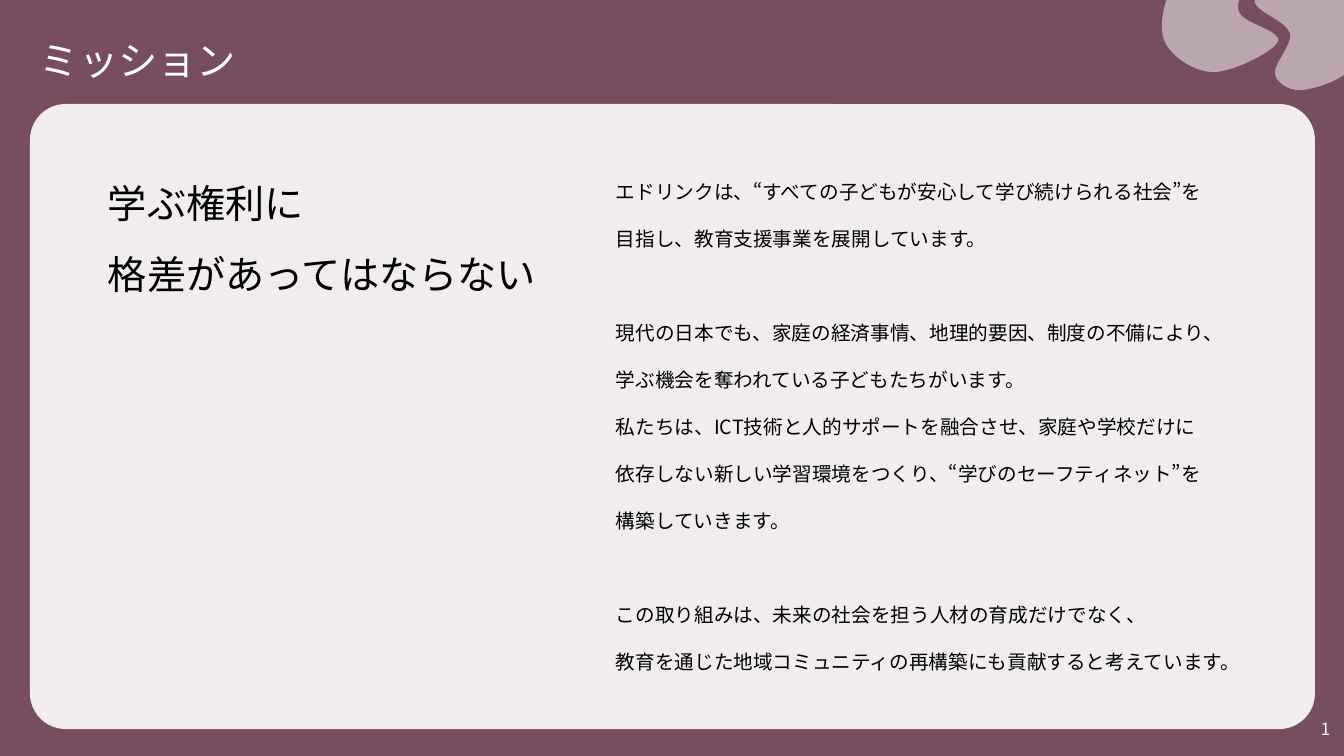
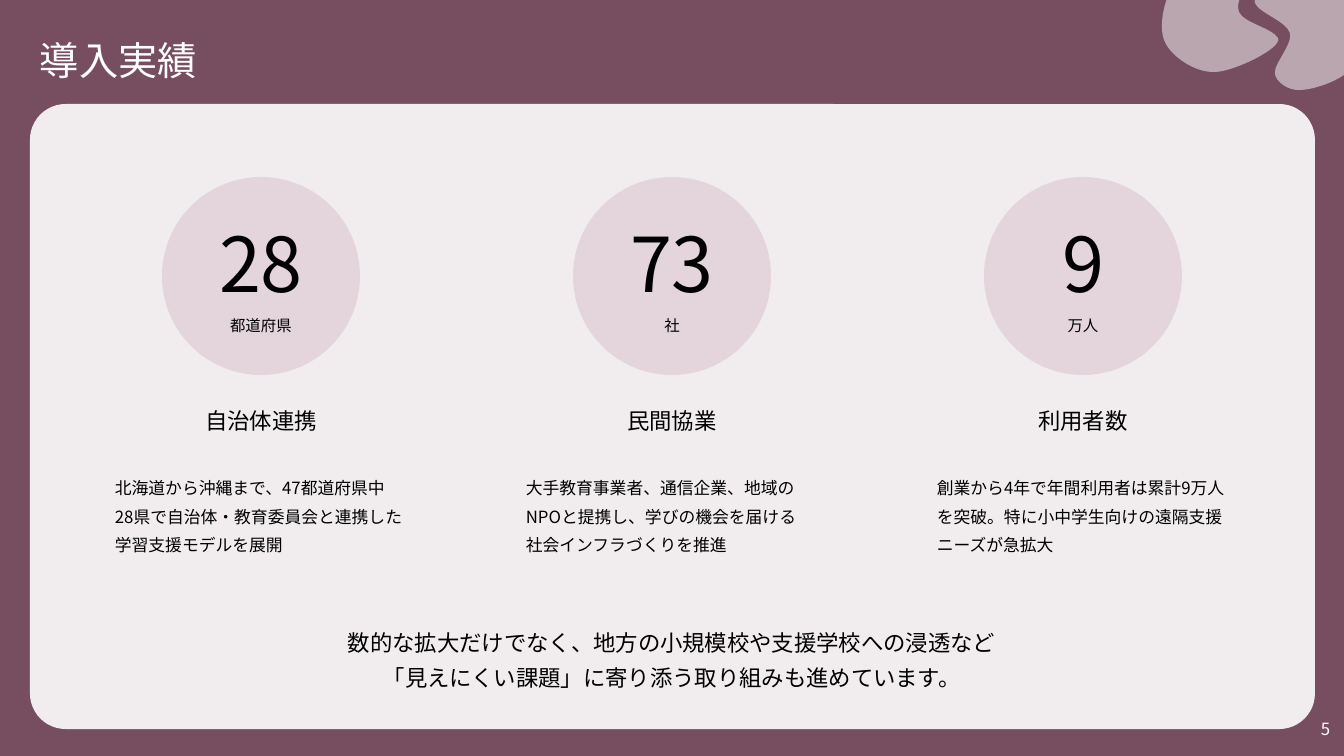
"""Build the mission and track record slides."""
from lxml.etree import SubElement
from pptx import Presentation
from pptx.dml.color import RGBColor
from pptx.enum.lang import MSO_LANGUAGE_ID
from pptx.enum.shapes import MSO_SHAPE
from pptx.enum.text import MSO_ANCHOR, PP_ALIGN
from pptx.oxml.ns import qn
from pptx.util import Pt

PX = 12192000 / 1344
FONT = "Noto Sans CJK JP"
COLORS = {"plum": "764E60", "white": "FFFFFF", "black": "000000", "rose": "E3D5DB"}
MID, STEP = 672, 411

BLOBS = [
    [(1352, 68), (1363, 54), (1372, 28), (1367, 13), (1362, -2), (1341, -21),
     (1321, -22), (1303, -24), (1250, -8), (1255, 3), (1259, 13), (1286, 21),
     (1290, 33), (1293, 44), (1274, 64), (1275, 73), (1275, 81), (1288, 91),
     (1300, 90), (1313, 90), (1341, 81), (1352, 68)],
    [(1173, -14), (1164, 0), (1158, 28), (1165, 42), (1171, 56), (1195, 73),
     (1215, 72), (1233, 72), (1283, 48), (1278, 38), (1272, 28), (1244, 23),
     (1239, 12), (1234, 1), (1251, -20), (1249, -28), (1248, -36), (1234, -45),
     (1221, -42), (1209, -40), (1183, -28), (1173, -14)],
]

SLOGAN = ["学ぶ権利に", "格差があってはならない"]
STORY = [
    ["エドリンクは、“すべての子どもが安心して学び続けられる社会”を",
     "目指し、教育支援事業を展開しています。"],
    ["現代の日本でも、家庭の経済事情、地理的要因、制度の不備により、",
     "学ぶ機会を奪われている子どもたちがいます。",
     "私たちは、ICT技術と人的サポートを融合させ、家庭や学校だけに",
     "依存しない新しい学習環境をつくり、“学びのセーフティネット”を",
     "構築していきます。"],
    ["この取り組みは、未来の社会を担う人材の育成だけでなく、",
     "教育を通じた地域コミュニティの再構築にも貢献すると考えています。"],
]
STATS = [
    ("28", "都道府県", "自治体連携",
     ["北海道から沖縄まで、47都道府県中", "28県で自治体・教育委員会と連携した",
      "学習支援モデルを展開"]),
    ("73", "社", "民間協業",
     ["大手教育事業者、通信企業、地域の", "NPOと提携し、学びの機会を届ける",
      "社会インフラづくりを推進"]),
    ("9", "万人", "利用者数",
     ["創業から4年で年間利用者は累計9万人", "を突破。特に小中学生向けの遠隔支援",
      "ニーズが急拡大"]),
]
CLOSING = ["数的な拡大だけでなく、地方の小規模校や支援学校への浸透など",
           "「見えにくい課題」に寄り添う取り組みも進めています。"]


def emu(*vals):
    return [round(v * PX) for v in vals]


def paint(shape, color, alpha=100):
    shape.shadow.inherit = False
    shape.fill.solid()
    shape.fill.fore_color.rgb = RGBColor.from_string(COLORS[color])
    shape.line.fill.background()
    if alpha < 100:
        node = shape._element.spPr.find(qn("a:solidFill")).find(qn("a:srgbClr"))
        SubElement(node, qn("a:alpha")).set("val", str(alpha * 1000))


def write(shape, lines, sizes, color="black", align=PP_ALIGN.LEFT,
          anchor=MSO_ANCHOR.TOP, gaps=None, pitch=None):
    frame = shape.text_frame
    frame.word_wrap = True
    frame.vertical_anchor = anchor
    for i, line in enumerate(lines):
        para = frame.add_paragraph() if i else frame.paragraphs[0]
        para.text = line
        para.alignment = align
        if pitch:
            para.line_spacing = pitch
        if i and gaps:
            para.space_before = Pt(gaps[i])
        font = para.font
        font.size = Pt(sizes[i] if isinstance(sizes, list) else sizes)
        font.color.rgb = RGBColor.from_string(COLORS[color])
        font.name = FONT
        font.language_id = MSO_LANGUAGE_ID.JAPANESE
        SubElement(para._p.pPr.find(qn("a:defRPr")), qn("a:ea")).set("typeface", FONT)
        for run in para.runs:
            run.font.language_id = MSO_LANGUAGE_ID.JAPANESE


def label(slide, box, lines, size, **style):
    write(slide.shapes.add_textbox(*emu(*box)), lines, size, **style)


def blob(slide, pts):
    pts = [emu(*pt) for pt in pts]
    pen = slide.shapes.build_freeform(*pts[0])
    pen.add_line_segments(pts[1:], close=True)
    shape = pen.convert_to_shape()
    lines = list(shape._element.iter(qn("a:lnTo")))
    for i in range(0, len(lines), 3):
        bend = SubElement(lines[i].getparent(), qn("a:cubicBezTo"))
        lines[i].addprevious(bend)
        for line in lines[i:i + 3]:
            bend.append(line[0])
            line.getparent().remove(line)
    paint(shape, "white", 50)


def frame(deck, title, number):
    slide = deck.slides.add_slide(deck.slide_layouts[6])
    back = slide.shapes.add_shape(MSO_SHAPE.RECTANGLE, *emu(0, 0, 1344, 756))
    paint(back, "plum")
    label(slide, (30, 30, 1285, 59), [title], 28, color="white",
          anchor=MSO_ANCHOR.MIDDLE)
    card = slide.shapes.add_shape(MSO_SHAPE.ROUNDED_RECTANGLE,
                                  *emu(30, 104, 1285, 625))
    card.adjustments[0] = 0.057
    paint(card, "white", 90)
    label(slide, (1291, 709, 49, 40), [str(number)], 12, color="white",
          align=PP_ALIGN.RIGHT, anchor=MSO_ANCHOR.MIDDLE)
    for pts in BLOBS:
        blob(slide, pts)
    return slide


def mission(deck):
    slide = frame(deck, "ミッション", 1)
    label(slide, (98, 151, 478, 531), SLOGAN, 28, pitch=1.5)
    lines = [line for part in STORY for line in part]
    gaps = [0 if i else 33.6 for part in STORY for i in range(len(part))]
    label(slide, (606, 151, 641, 531), lines, 14, gaps=gaps, pitch=2.0)


def record(deck):
    slide = frame(deck, "導入実績", 5)
    mid = {"align": PP_ALIGN.CENTER, "anchor": MSO_ANCHOR.MIDDLE}
    size, wide = 198, 312
    for i, (count, unit, name, notes) in enumerate(STATS):
        hub = MID + (i - 1) * STEP
        disc = slide.shapes.add_shape(MSO_SHAPE.OVAL,
                                      *emu(hub - size // 2, 177, size, size))
        paint(disc, "rose")
        write(disc, [count, unit], [54, 11], gaps=[0, 6], **mid)
        left = hub - wide // 2
        label(slide, (left, 402, wide, 37), [name], 16, **mid)
        label(slide, (left, 473, wide, 94), notes, 12, gaps=[0, 6, 6])
    label(slide, (133, 616, 1078, 88), CLOSING, 16, gaps=[0, 6], **mid)


def main():
    deck = Presentation()
    deck.slide_width, deck.slide_height = emu(1344, 756)
    mission(deck)
    record(deck)
    deck.save("out.pptx")


if __name__ == "__main__":
    main()
